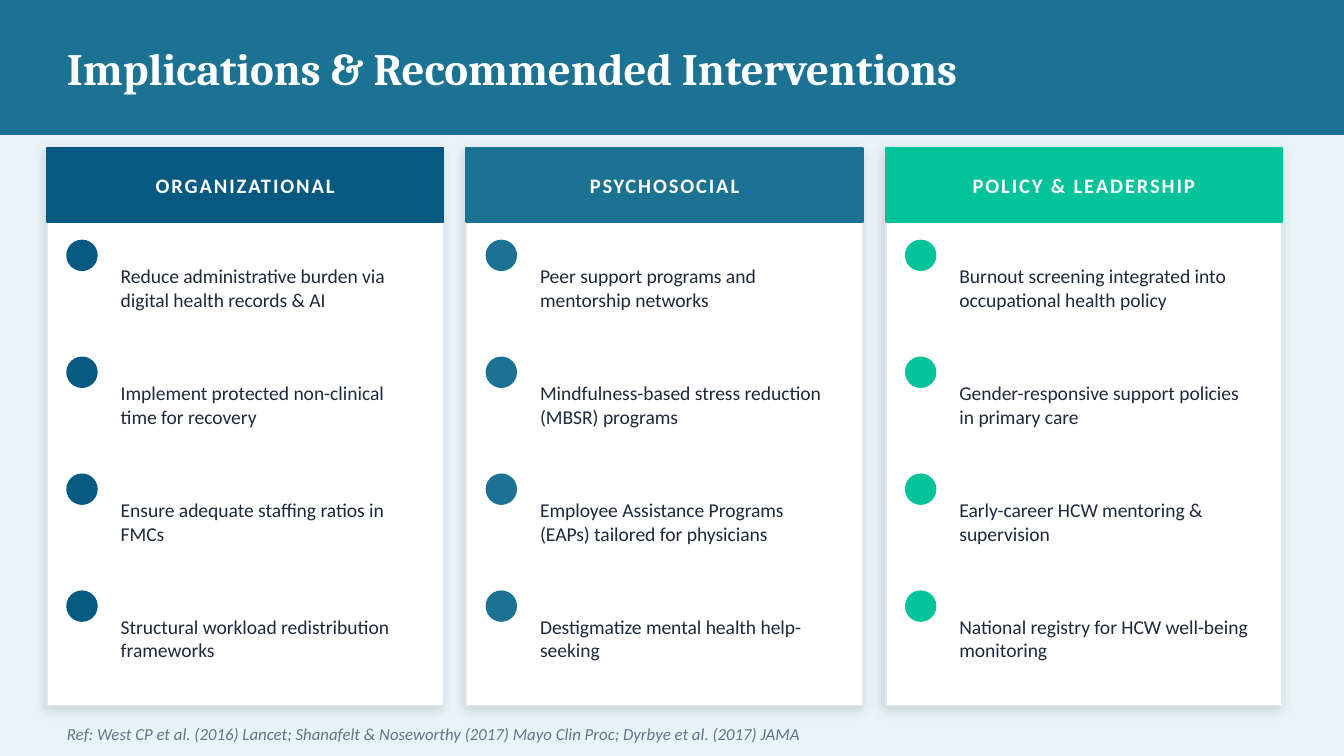
import dataclasses

import lxml.etree
import pptx
import pptx.dml.color
import pptx.enum.shapes
import pptx.enum.text
import pptx.oxml.ns
import pptx.util

COLUMNS, ROWS = 100, 56.25
CELL = pptx.util.Inches(0.1)
RECTANGLE = pptx.enum.shapes.MSO_SHAPE.RECTANGLE
OVAL = pptx.enum.shapes.MSO_SHAPE.OVAL


@dataclasses.dataclass(frozen=True)
class Theme:
    backdrop: str = "E8F4F8"
    banner: str = "1C7293"
    organizational: str = "065A82"
    psychosocial: str = "1C7293"
    policy: str = "02C39A"
    card: str = "FFFFFF"
    card_edge: str = "E2E8F0"
    shade: str = "000000"
    light: str = "FFFFFF"
    ink: str = "1E293B"
    muted: str = "64748B"
    heading_font: str = "Cambria"
    body_font: str = "Calibri"
    title_size: float = 24
    header_size: float = 11
    item_size: float = 10.5
    reference_size: float = 9


THEME = Theme()

PILLARS = [
    ("ORGANIZATIONAL", THEME.organizational, [
        "Reduce administrative burden via digital health records & AI",
        "Implement protected non-clinical time for recovery",
        "Ensure adequate staffing ratios in FMCs",
        "Structural workload redistribution frameworks",
    ]),
    ("PSYCHOSOCIAL", THEME.psychosocial, [
        "Peer support programs and mentorship networks",
        "Mindfulness-based stress reduction (MBSR) programs",
        "Employee Assistance Programs (EAPs) tailored for physicians",
        "Destigmatize mental health help-seeking",
    ]),
    ("POLICY & LEADERSHIP", THEME.policy, [
        "Burnout screening integrated into occupational health policy",
        "Gender-responsive support policies in primary care",
        "Early-career HCW mentoring & supervision",
        "National registry for HCW well-being monitoring",
    ]),
]


def rgb(code):
    return pptx.dml.color.RGBColor.from_string(code)


def cells(box):
    return [round(length * CELL) for length in box]


def add_block(slide, kind, box, fill, edge=None):
    block = slide.shapes.add_shape(kind, *cells(box))
    block.shadow.inherit = False
    block.fill.solid()
    block.fill.fore_color.rgb = rgb(fill)
    block.line.color.rgb = rgb(edge or fill)
    block.line.width = pptx.util.Pt(1)
    return block


def add_soft_shadow(block):
    qn = pptx.oxml.ns.qn
    effects = block._element.spPr.find(qn("a:effectLst"))
    shadow = lxml.etree.SubElement(
        effects, qn("a:outerShdw"), blurRad=str(pptx.util.Pt(6)),
        dist=str(pptx.util.Pt(2)), dir=str(135 * 60000),
        algn="bl", rotWithShape="0")
    color = lxml.etree.SubElement(shadow, qn("a:srgbClr"), val=THEME.shade)
    lxml.etree.SubElement(color, qn("a:alpha"), val="12000")


def add_text(slide, box, text, *, size, color, font=THEME.body_font, bold=False,
             italic=False, centered=False, spacing=0, inset=True):
    frame = slide.shapes.add_textbox(*cells(box)).text_frame
    frame.word_wrap = True
    frame.vertical_anchor = pptx.enum.text.MSO_ANCHOR.MIDDLE
    if not inset:
        frame.margin_left = frame.margin_right = 0
        frame.margin_top = frame.margin_bottom = 0
    paragraph = frame.paragraphs[0]
    if centered:
        paragraph.alignment = pptx.enum.text.PP_ALIGN.CENTER
    run = paragraph.add_run()
    run.text = text
    run.font.name = font
    run.font.size = pptx.util.Pt(size)
    run.font.bold = bold
    run.font.italic = italic
    run.font.color.rgb = rgb(color)
    if spacing:
        run.font._element.set("spc", str(spacing * 100))


def add_banner(slide, box, title):
    left, top, width, height = box
    add_block(slide, RECTANGLE, box, THEME.banner)
    add_text(slide, (left + 4, top, width - 8, height), title,
             size=THEME.title_size, color=THEME.light,
             font=THEME.heading_font, bold=True)


def add_item(slide, box, text, accent):
    left, top, width, height = box
    add_block(slide, OVAL, (left, top + 0.4, 2.2, 2.2), accent)
    add_text(slide, (left + 3, top, width - 3, height), text,
             size=THEME.item_size, color=THEME.ink)


def add_pillar(slide, box, heading, accent, items):
    left, top, width, height = box
    header = (left, top, width, 5.5)
    add_soft_shadow(add_block(slide, RECTANGLE, box, THEME.card, THEME.card_edge))
    add_block(slide, RECTANGLE, header, accent)
    add_text(slide, header, heading, size=THEME.header_size, color=THEME.light,
             bold=True, centered=True, spacing=1, inset=False)
    for index, item in enumerate(items):
        item_box = (left + 1.5, top + 6.5 + index * 8.7, width - 2.7, 7.8)
        add_item(slide, item_box, item, accent)


def add_pillars(slide, box):
    left, top, width, height = box
    gap = 1.7
    pillar_width = (width - gap * (len(PILLARS) - 1)) / len(PILLARS)
    for index, pillar in enumerate(PILLARS):
        pillar_left = left + index * (pillar_width + gap)
        add_pillar(slide, (pillar_left, top, pillar_width, height), *pillar)


def add_reference(slide, box, text):
    add_text(slide, box, text, size=THEME.reference_size, color=THEME.muted,
             italic=True)


def main():
    deck = pptx.Presentation()
    deck.slide_width, deck.slide_height = cells((COLUMNS, ROWS))
    slide = deck.slides.add_slide(deck.slide_layouts[6])
    slide.background.fill.solid()
    slide.background.fill.fore_color.rgb = rgb(THEME.backdrop)
    add_banner(slide, (0, 0, COLUMNS, 10),
               "Implications & Recommended Interventions")
    add_pillars(slide, (3.5, 11, 91.9, 41.5))
    add_reference(slide, (4, 53.5, COLUMNS - 8, 2.2),
                  "Ref: West CP et al. (2016) Lancet; Shanafelt & Noseworthy (2017) "
                  "Mayo Clin Proc; Dyrbye et al. (2017) JAMA")
    deck.save("out.pptx")


if __name__ == "__main__":
    main()
